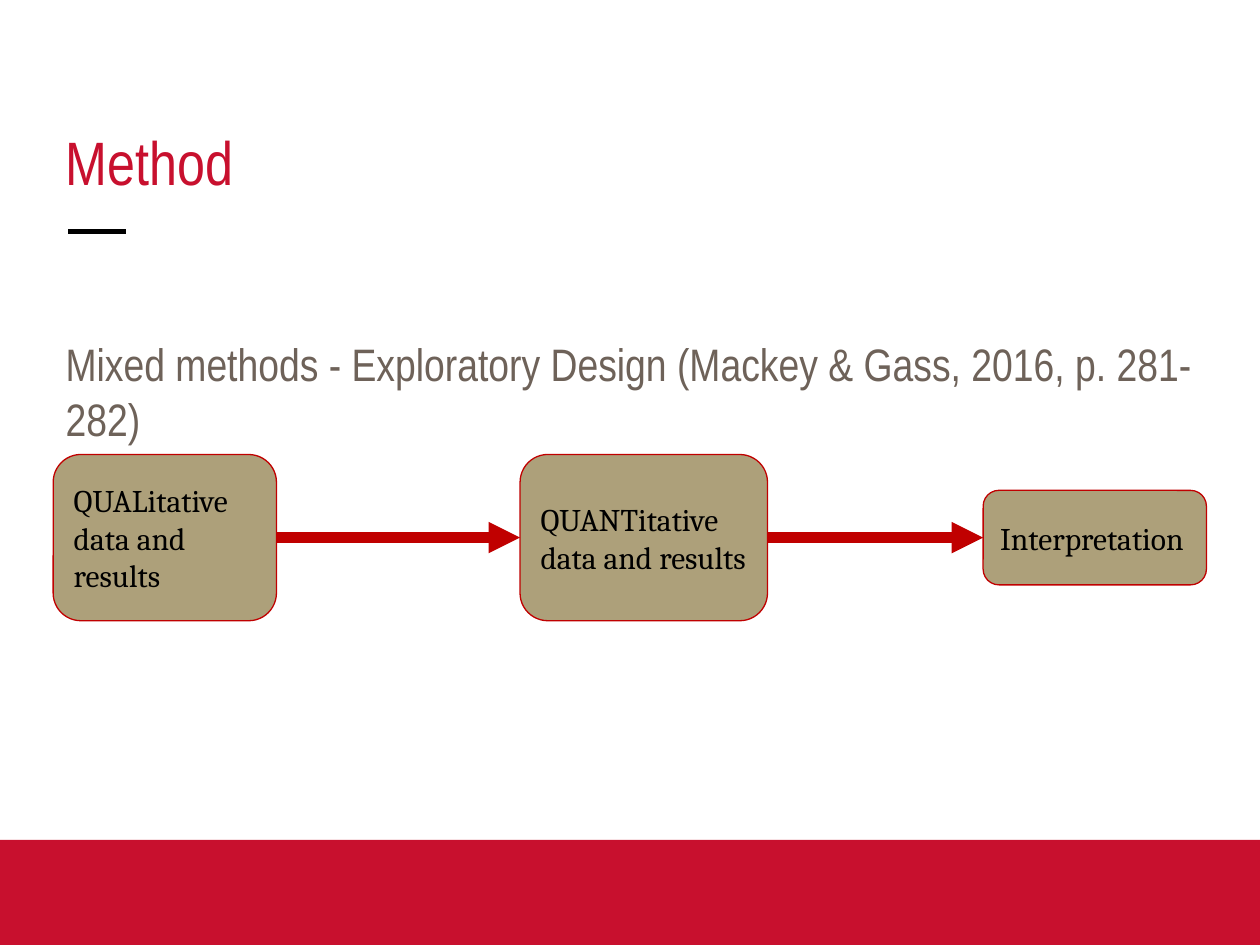
from pptx import Presentation
from pptx.dml.color import RGBColor
from pptx.enum.shapes import MSO_CONNECTOR, MSO_SHAPE
from pptx.enum.text import MSO_ANCHOR, PP_ALIGN
from pptx.oxml.ns import qn
from pptx.util import Pt
from lxml.etree import SubElement


def paint(hue):
    return RGBColor.from_string(hue)


class Deck:
    red, dark, tan, grey, black = "C8102E", "C00000", "ADA07A", "6E6259", "000000"
    head, body = "Arial Narrow", "Cambria"
    inset = 7.2

    def __init__(self, slide):
        self.slide = slide

    def letter(self, shape, text, font, size, hue, anchor):
        frame = shape.text_frame
        frame.word_wrap = True
        frame.vertical_anchor = anchor
        frame.margin_left = frame.margin_right = Pt(self.inset)
        frame.margin_top = frame.margin_bottom = Pt(self.inset)
        para = frame.paragraphs[0]
        para.alignment = PP_ALIGN.LEFT
        run = para.add_run()
        run.text = text
        run.font.name = font
        run.font.size = Pt(size)
        run.font.color.rgb = paint(hue)

    def label(self, text, x, y, w, h, size, hue, anchor=MSO_ANCHOR.TOP):
        box = self.slide.shapes.add_textbox(Pt(x), Pt(y), Pt(w), Pt(h))
        self.letter(box, text, self.head, size, hue, anchor)

    def block(self, kind, x, y, w, h, fill):
        shape = self.slide.shapes.add_shape(kind, Pt(x), Pt(y), Pt(w), Pt(h))
        shape.shadow.inherit = False
        shape.fill.solid()
        shape.fill.fore_color.rgb = paint(fill)
        shape.line.fill.background()
        return shape

    def step(self, text, x, mid, w, h):
        shape = self.block(MSO_SHAPE.ROUNDED_RECTANGLE, x, mid - h / 2, w, h, self.tan)
        shape.line.color.rgb = paint(self.dark)
        shape.line.width = Pt(0.75)
        self.letter(shape, text, self.body, 18, self.black, MSO_ANCHOR.MIDDLE)

    def rule(self, start, end, y, hue, width, arrow=False):
        line = self.slide.shapes.add_connector(
            MSO_CONNECTOR.STRAIGHT, Pt(start), Pt(y), Pt(end), Pt(y))
        line.line.color.rgb = paint(hue)
        line.line.width = Pt(width)
        props = line.element.spPr
        if arrow:
            SubElement(props.find(qn("a:ln")), qn("a:tailEnd"), type="triangle")
        SubElement(props, qn("a:effectLst"))


def main():
    show = Presentation()
    show.slide_width, show.slide_height = Pt(720), Pt(540)
    deck = Deck(show.slides.add_slide(show.slide_layouts[6]))

    deck.block(MSO_SHAPE.RECTANGLE, 0, 480, 720, 60, deck.red)
    deck.rule(39, 72, 132.4, deck.black, 3)
    deck.label("Method", 30.4, 66, 659, 54, 35, deck.red, MSO_ANCHOR.BOTTOM)
    deck.label("Mixed methods - Exploratory Design (Mackey & Gass, 2016, p. 281-282)",
               30.4, 185, 659, 47.5, 26, deck.grey)

    mid = 307.2
    steps = [
        ("QUALitative data and results", 30.4, 127.6, 95),
        ("QUANTitative data and results", 297.2, 141.4, 95),
        ("Interpretation", 561.8, 127.6, 54),
    ]
    for text, x, w, h in steps:
        deck.step(text, x, mid, w, h)
    for (_, x, w, _), (_, end, _, _) in zip(steps, steps[1:]):
        deck.rule(x + w, end, mid, deck.dark, 6, arrow=True)

    show.save("out.pptx")


if __name__ == "__main__":
    main()
